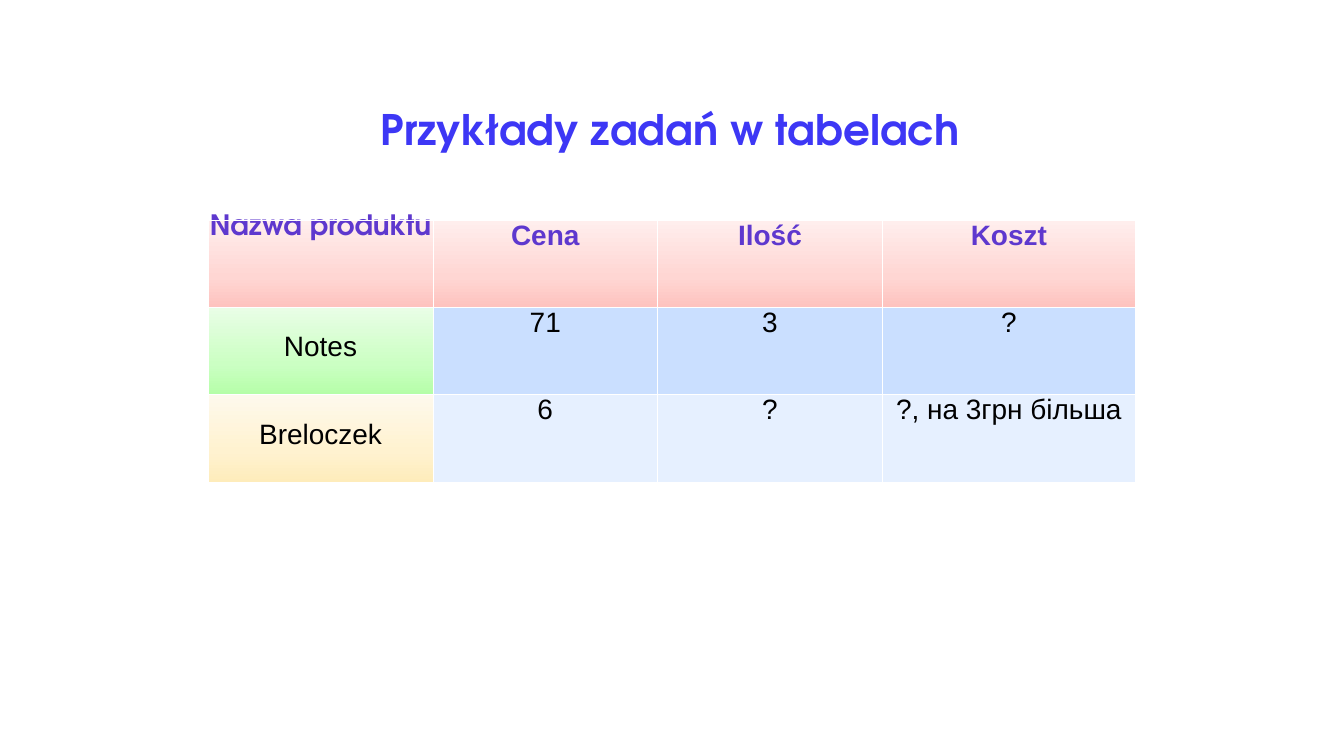
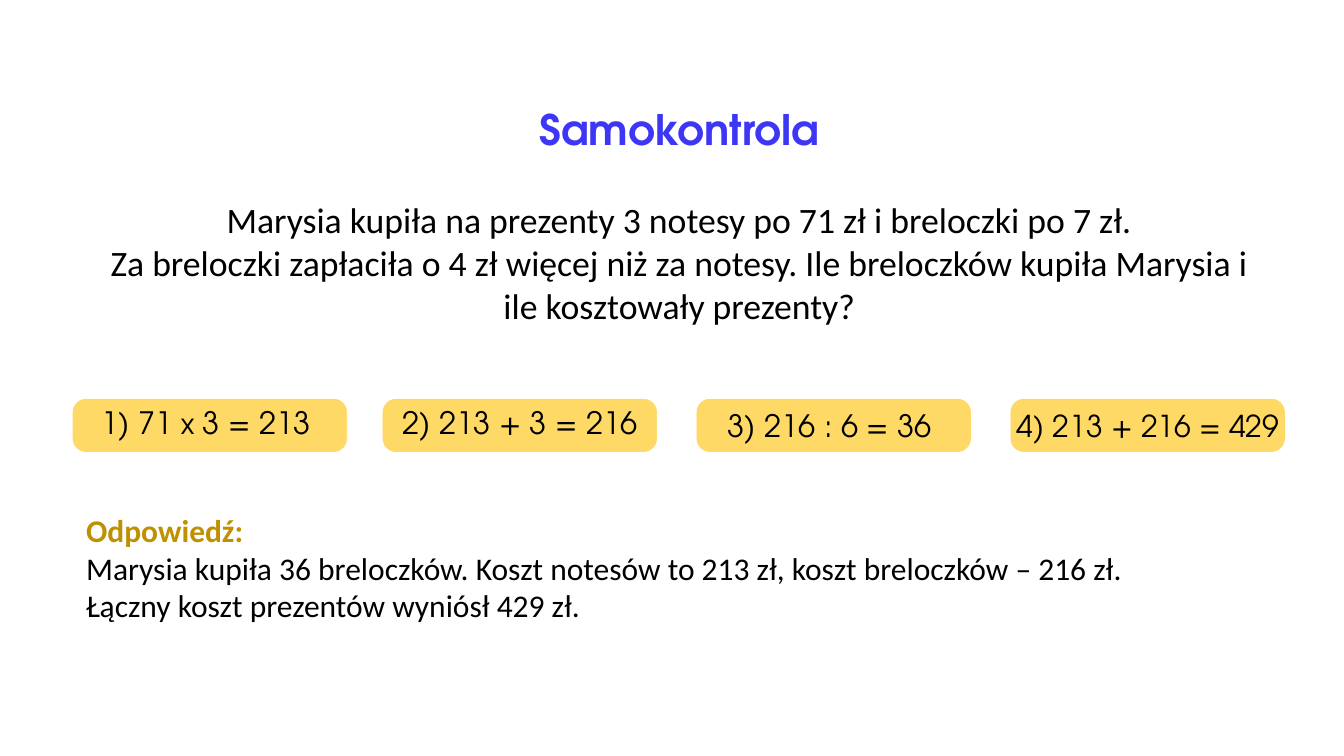
from lxml import etree
from pptx import Presentation
from pptx.dml.color import RGBColor
from pptx.enum.shapes import MSO_SHAPE as Shape
from pptx.enum.text import MSO_ANCHOR as Anchor, MSO_AUTO_SIZE as AutoSize, PP_ALIGN as Align
from pptx.oxml.ns import qn
from pptx.util import Inches, Pt

BLUE = RGBColor(0x3D, 0x37, 0xF5)
VIOLET = RGBColor(0x5E, 0x38, 0xCE)
BLACK = RGBColor(0x00, 0x00, 0x00)
WHITE = RGBColor(0xFF, 0xFF, 0xFF)
YELLOW = RGBColor(0xFF, 0xD9, 0x66)
GOLD = RGBColor(0xBF, 0x90, 0x00)
ROW_BLUE = RGBColor(0xCA, 0xDF, 0xFF)
ROW_PALE = RGBColor(0xE6, 0xF0, 0xFF)
PINK_FADE = [RGBColor(0xFE, 0xC3, 0xBF), RGBColor(0xFF, 0xD6, 0xD3), RGBColor(0xFF, 0xEE, 0xED)]
GREEN_FADE = [RGBColor(0xB5, 0xFE, 0xA8), RGBColor(0xCB, 0xFF, 0xC3), RGBColor(0xE9, 0xFE, 0xE6)]
CREAM_FADE = [RGBColor(0xFE, 0xEC, 0xBB), RGBColor(0xFF, 0xF2, 0xD0), RGBColor(0xFE, 0xF9, 0xEC)]
FADE_STOPS = (0, 35000, 100000)

DISPLAY = "TeX Gyre Adventor"
BODY = "Calibri"
TABLE = "Arial"


def add_solid(parent, color):
    solid = etree.SubElement(parent, qn("a:solidFill"))
    etree.SubElement(solid, qn("a:srgbClr"), val=str(color))


class Lesson:
    def __init__(self):
        self.deck = Presentation()
        self.deck.slide_width, self.deck.slide_height = Inches(26.67), Inches(15)
        self.slide = None

    def new_slide(self, title, left, width):
        self.slide = self.deck.slides.add_slide(self.deck.slide_layouts[5])
        heading = self.slide.shapes.title
        heading.left, heading.top = Inches(left), Inches(2)
        heading.width, heading.height = Inches(width), Inches(1.11)
        self.fill_frame(heading.text_frame, [title], 0.05, Anchor.TOP)
        self.style(heading.text_frame.paragraphs[0], DISPLAY, 60, BLUE, True)

    def style(self, paragraph, font, size, color=BLACK, bold=False, align=Align.CENTER):
        paragraph.alignment = align
        for run in paragraph.runs:
            run.font.name, run.font.size, run.font.bold = font, Pt(size), bold
            run.font.color.rgb = color

    def fill_frame(self, frame, lines, inset, anchor):
        frame.text = "\n".join(lines)
        frame.word_wrap = True
        frame.auto_size = AutoSize.SHAPE_TO_FIT_TEXT
        frame.vertical_anchor = anchor
        frame.margin_left = frame.margin_right = Inches(inset)
        frame.margin_top = frame.margin_bottom = Inches(inset)

    def text(self, lines, left, top, width, height, font, size, align=Align.CENTER):
        box = self.slide.shapes.add_textbox(Inches(left), Inches(top), Inches(width), Inches(height))
        self.fill_frame(box.text_frame, lines, 0.06, Anchor.MIDDLE)
        for paragraph in box.text_frame.paragraphs:
            self.style(paragraph, font, size, align=align)
        return box.text_frame.paragraphs

    def pill(self, left):
        pill = self.slide.shapes.add_shape(
            Shape.ROUNDED_RECTANGLE, Inches(left), Inches(7.92), Inches(5.43), Inches(1.04))
        pill.adjustments[0] = 0.25
        pill.shadow.inherit = False
        pill.fill.solid()
        pill.fill.fore_color.rgb = pill.line.color.rgb = YELLOW
        pill.line.width = Pt(1)

    def table(self, rows, left, top, widths, row_height):
        grid = self.slide.shapes.add_table(
            len(rows), len(widths), Inches(left), Inches(top),
            Inches(sum(widths)), Inches(row_height * len(rows))).table
        for column, width in zip(grid.columns, widths):
            column.width = Inches(width)
        for row in grid.rows:
            row.height = Inches(row_height)
        for r, values in enumerate(rows):
            for c, value in enumerate(values):
                cell = grid.cell(r, c)
                cell.text = value
                cell.margin_left = cell.margin_right = cell.margin_top = cell.margin_bottom = 0
                self.borders(cell, top=3 if r == 1 else 1, bottom=3 if r == 0 else 1)
                self.style(cell.text_frame.paragraphs[0], TABLE, 40,
                           VIOLET if r == 0 else BLACK, r == 0)
        return grid

    def borders(self, cell, top, bottom):
        properties = cell._tc.get_or_add_tcPr()
        for side, width in (("L", 1), ("R", 1), ("T", top), ("B", bottom)):
            line = etree.SubElement(properties, qn(f"a:ln{side}"), w=str(Pt(width)))
            add_solid(line, WHITE)

    def plain(self, cell, color):
        cell.fill.solid()
        cell.fill.fore_color.rgb = color

    def fade(self, cell, colors):
        gradient = etree.SubElement(cell._tc.get_or_add_tcPr(), qn("a:gradFill"), rotWithShape="1")
        stops = etree.SubElement(gradient, qn("a:gsLst"))
        for position, color in zip(FADE_STOPS, colors):
            stop = etree.SubElement(stops, qn("a:gs"), pos=str(position))
            etree.SubElement(stop, qn("a:srgbClr"), val=str(color))
        etree.SubElement(gradient, qn("a:lin"), ang="16200000", scaled="0")


def build_tasks(lesson):
    lesson.new_slide("Przykłady zadań w tabelach", 1.64, 23.32)
    products = lesson.table([
        ["Nazwa produktu", "Cena", "Ilość", "Koszt"],
        ["Notes", "71", "3", "?"],
        ["Breloczek", "6", "?", "?, на 3грн більша"],
    ], 4.13, 4.37, [4.46, 4.46, 4.46, 5.02], 1.73)
    for c in range(4):
        lesson.fade(products.cell(0, c), PINK_FADE)
    for r, name_fade, value_fill in ((1, GREEN_FADE, ROW_BLUE), (2, CREAM_FADE, ROW_PALE)):
        name = products.cell(r, 0)
        name.margin_top = Inches(0.48)
        lesson.fade(name, name_fade)
        for c in range(1, 4):
            lesson.plain(products.cell(r, c), value_fill)
    product_header = products.cell(0, 0).text_frame.paragraphs[0]
    product_header.line_spacing = 0.75
    lesson.style(product_header, DISPLAY, 40, VIOLET, True)


def build_check(lesson):
    lesson.new_slide("Samokontrola", 1.96, 23.04)
    lesson.text([
        "Marysia kupiła na prezenty 3 notesy po 71 zł i breloczki po 7 zł.",
        "Za breloczki zapłaciła o 4 zł więcej niż za notesy. "
        "Ile breloczków kupiła Marysia i ile kosztowały prezenty?",
    ], 1.96, 3.86, 23.04, 2.69, BODY, 51)
    steps = [
        (1.45, "1) 71 х 3 = 213", 1.37, 7.96, 5.43, 44),
        (7.6, "2) 213 + 3 = 216", 7.03, 7.96, 6.58, 44),
        (13.83, "3) 216 : 6 = 36", 12.8, 8.02, 7.33, 44),
        (20.06, "4) 213 + 216 = 429", 19.49, 8.02, 6.58, 43),
    ]
    for pill_left, step, left, top, width, size in steps:
        lesson.pill(pill_left)
        lesson.text([step], left, top, width, 0.85, DISPLAY, size)
    answer = lesson.text([
        "Odpowiedź:",
        "Marysia kupiła 36 breloczków. Koszt notesów to 213 zł, koszt breloczków – 216 zł. "
        "Łączny koszt prezentów wyniósł 429 zł.",
    ], 1.65, 10.07, 22.3, 2.38, BODY, 45, Align.LEFT)
    lesson.style(answer[0], BODY, 45, GOLD, True, Align.LEFT)


def main():
    lesson = Lesson()
    build_tasks(lesson)
    build_check(lesson)
    lesson.deck.save("out.pptx")


if __name__ == "__main__":
    main()
